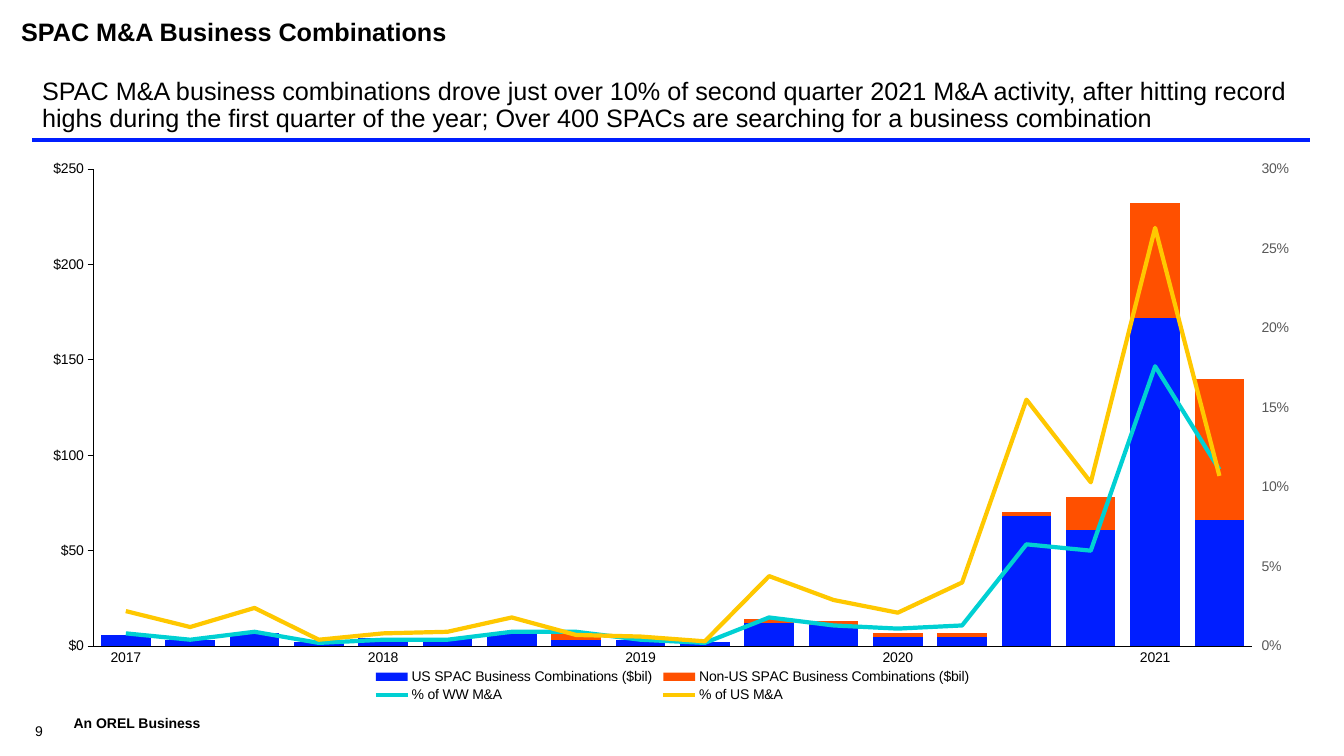
from copy import deepcopy

from pptx import Presentation
from pptx.chart.axis import ValueAxis
from pptx.chart.data import CategoryChartData
from pptx.dml.color import RGBColor
from pptx.enum.chart import (
    XL_CHART_TYPE, XL_LEGEND_POSITION, XL_MARKER_STYLE, XL_TICK_MARK,
)
from pptx.enum.shapes import MSO_CONNECTOR
from pptx.enum.text import MSO_ANCHOR
from pptx.oxml import parse_xml
from pptx.oxml.ns import nsdecls, qn
from pptx.util import Pt

STACKED = XL_CHART_TYPE.COLUMN_STACKED
BOTTOM_LEGEND = XL_LEGEND_POSITION.BOTTOM
NO_MARKER = XL_MARKER_STYLE.NONE
TICK_NONE, TICK_OUT = XL_TICK_MARK.NONE, XL_TICK_MARK.OUTSIDE
STRAIGHT = MSO_CONNECTOR.STRAIGHT
MIDDLE, BOTTOM = MSO_ANCHOR.MIDDLE, MSO_ANCHOR.BOTTOM

FONT = "Arial"
COLORS = {
    "black": "000000", "gray": "595959", "blue": "001EFF",
    "orange": "FF5000", "teal": "00D0D3", "yellow": "FFC800",
}
TITLE = "SPAC M&A Business Combinations"
HEADLINE = (
    "SPAC M&A business combinations drove just over 10% of second quarter 2021 "
    "M&A activity, after hitting record highs during the first quarter of the "
    "year; Over 400 SPACs are searching for a business combination"
)
TEXTS = [
    (TITLE, (8, 11, 480, 23), 18, True, MIDDLE),
    (HEADLINE, (23, 52, 913, 47), 18, False, MIDDLE),
    ("An OREL Business", (45.5, 507, 171, 19), 10, True, MIDDLE),
    ("9", (25, 508.5, 43, 19.5), 10, False, BOTTOM),
]
YEARS = ["2017", "2018", "2019", "2020", "2021"]
BARS = [
    ("US SPAC Business Combinations ($bil)", "blue",
     [6, 3, 7, 2, 4, 4, 7, 3, 3, 2, 12, 11, 5, 5, 68, 61, 172, 66]),
    ("Non-US SPAC Business Combinations ($bil)", "orange",
     [0, 0, 0, 0, 0, 0, 0, 4, 0, 0, 2, 2, 2, 2, 2, 17, 60, 74]),
]
LINES = [
    ("% of WW M&A", "teal",
     [0.008, 0.004, 0.009, 0.002, 0.004, 0.004, 0.009, 0.009, 0.004,
      0.002, 0.018, 0.013, 0.011, 0.013, 0.064, 0.06, 0.176, 0.111]),
    ("% of US M&A", "yellow",
     [0.022, 0.012, 0.024, 0.004, 0.008, 0.009, 0.018, 0.007, 0.006,
      0.003, 0.044, 0.029, 0.021, 0.04, 0.155, 0.103, 0.263, 0.107]),
]
CHART_BOX = (29, 106, 903, 400)
PLOT_LAYOUT = (0.042, 0.037, 0.916, 0.852)
LEGEND_LAYOUT = (0.26, 0.925, 0.48, 0.07)
RULE = (23, 100, 936, 100)
RIGHT_CATEGORY_ID, RIGHT_VALUE_ID = "5001", "5002"


def color(name):
    return RGBColor.from_string(COLORS[name])


def style_font(font, size, name="black", bold=False):
    font.name, font.size, font.bold = FONT, Pt(size), bold
    font.color.rgb = color(name)


def add_text(slide, text, place, size, bold, anchor):
    box = slide.shapes.add_textbox(*map(Pt, place))
    frame = box.text_frame
    frame.vertical_anchor = anchor
    frame.word_wrap = True
    if anchor == BOTTOM:
        frame.margin_left = frame.margin_right = 0
        frame.margin_top = frame.margin_bottom = 0
    para = frame.paragraphs[0]
    para.text = text
    if text == HEADLINE:
        para.line_spacing = 0.9
    style_font(para.font, size, bold=bold)


def manual_layout(fractions, inner=False):
    target = '<c:layoutTarget val="inner"/>' if inner else ""
    modes = "".join(f'<c:{side}Mode val="edge"/>' for side in "xy")
    sizes = "".join(f'<c:{key} val="{value}"/>' for key, value in zip("xywh", fractions))
    return parse_xml(
        f'<c:layout {nsdecls("c")}><c:manualLayout>{target}{modes}{sizes}'
        "</c:manualLayout></c:layout>"
    )


def remove_children(parent, tag):
    for child in parent.findall(qn(tag)):
        parent.remove(child)


def style_value_axis(axis, top, step, number_format, font_color):
    axis.minimum_scale, axis.maximum_scale, axis.major_unit = 0, top, step
    axis.has_major_gridlines = False
    axis.major_tick_mark, axis.minor_tick_mark = TICK_OUT, TICK_NONE
    axis.tick_labels.number_format = number_format
    axis.tick_labels.number_format_is_linked = False
    style_font(axis.tick_labels.font, 10, font_color)


def move_lines_to_right_axis(chart):
    plot_area = chart.element.find(".//" + qn("c:plotArea"))
    bars = plot_area.find(qn("c:barChart"))
    lines = parse_xml(
        f'<c:lineChart {nsdecls("c")}><c:grouping val="standard"/>'
        '<c:varyColors val="0"/><c:marker val="1"/>'
        f'<c:axId val="{RIGHT_CATEGORY_ID}"/><c:axId val="{RIGHT_VALUE_ID}"/>'
        "</c:lineChart>"
    )
    marker = lines.find(qn("c:marker"))
    for series in bars.findall(qn("c:ser"))[len(BARS):]:
        remove_children(series, "c:invertIfNegative")
        marker.addprevious(series)
    bars.addnext(lines)

    left_value = plot_area.find(qn("c:valAx"))
    right_category = deepcopy(plot_area.find(qn("c:catAx")))
    right_value = deepcopy(left_value)
    left_value.addnext(right_category)
    right_category.addnext(right_value)
    for axis, own, other in (
        (right_category, RIGHT_CATEGORY_ID, RIGHT_VALUE_ID),
        (right_value, RIGHT_VALUE_ID, RIGHT_CATEGORY_ID),
    ):
        axis.find(qn("c:axId")).set("val", own)
        axis.find(qn("c:crossAx")).set("val", other)
    right_category.find(qn("c:delete")).set("val", "1")
    right_value.find(qn("c:axPos")).set("val", "r")
    right_value.find(qn("c:crosses")).set("val", "max")

    remove_children(plot_area, "c:layout")
    plot_area.insert(0, manual_layout(PLOT_LAYOUT, inner=True))
    return ValueAxis(right_value)


def add_combined_chart(slide):
    data = CategoryChartData()
    for year in YEARS:
        quarters = 2 if year == YEARS[-1] else 4
        for label in [year] + [""] * (quarters - 1):
            data.add_category(label)
    for group, number_format in ((BARS, '"$"#,##0'), (LINES, "0%")):
        for name, _, values in group:
            data.add_series(name, values, number_format)
    chart = slide.shapes.add_chart(STACKED, *map(Pt, CHART_BOX), data).chart
    chart.has_title = False
    style_font(chart.font, 10)

    category_axis, value_axis = chart.category_axis, chart.value_axis
    category_axis.major_tick_mark = category_axis.minor_tick_mark = TICK_NONE
    style_font(category_axis.tick_labels.font, 10)
    style_value_axis(value_axis, 250, 50, '"$"#,##0', "black")
    right_axis = move_lines_to_right_axis(chart)
    style_value_axis(right_axis, 0.3, 0.05, "0%", "gray")
    right_axis.format.line.fill.background()
    for axis in (category_axis, value_axis):
        axis.format.line.color.rgb = color("black")
        axis.format.line.width = Pt(0.75)

    bar_plot, line_plot = chart.plots
    bar_plot.gap_width, bar_plot.overlap = 30, 100
    bar_plot.vary_by_categories = False
    for series, (_, name, _) in zip(bar_plot.series, BARS):
        series.format.fill.solid()
        series.format.fill.fore_color.rgb = color(name)
    for series, (_, name, _) in zip(line_plot.series, LINES):
        series.format.line.color.rgb = color(name)
        series.format.line.width = Pt(3)
        series.marker.style = NO_MARKER
        series.smooth = False

    chart.has_legend = True
    chart.legend.position = BOTTOM_LEGEND
    chart.legend.include_in_layout = False
    style_font(chart.legend.font, 10)
    legend = chart.element.find(".//" + qn("c:legend"))
    remove_children(legend, "c:layout")
    legend.find(qn("c:legendPos")).addnext(manual_layout(LEGEND_LAYOUT))


def add_rule(slide):
    rule = slide.shapes.add_connector(STRAIGHT, *map(Pt, RULE))
    rule.line.color.rgb = color("blue")
    rule.line.width = Pt(3)
    properties = rule.element.find(qn("p:spPr"))
    properties.append(parse_xml(f'<a:effectLst {nsdecls("a")}/>'))


def main():
    deck = Presentation()
    deck.slide_width, deck.slide_height = Pt(960), Pt(540)
    slide = deck.slides.add_slide(deck.slide_layouts[6])
    add_combined_chart(slide)
    for entry in TEXTS:
        add_text(slide, *entry)
    add_rule(slide)
    deck.save("out.pptx")


if __name__ == "__main__":
    main()
